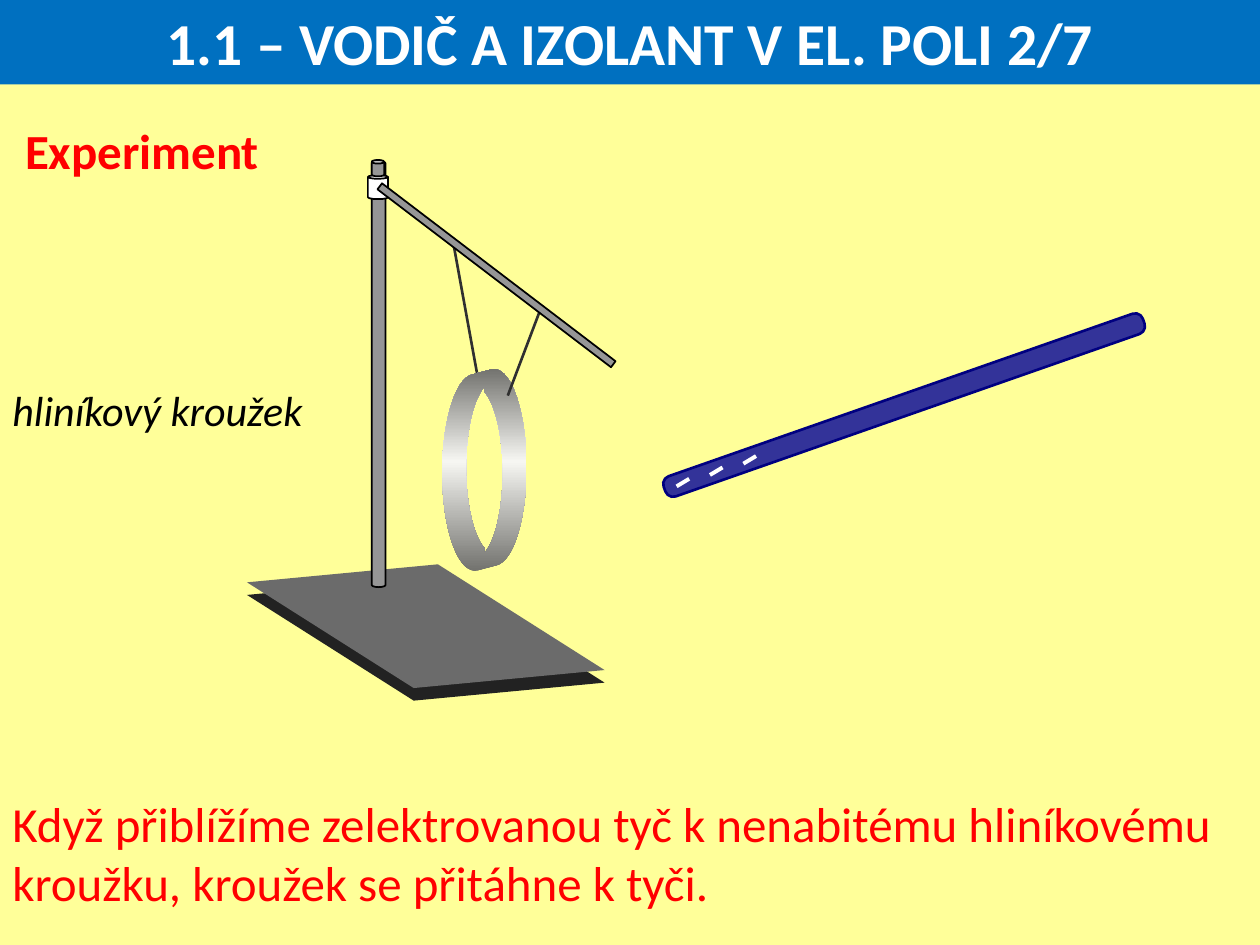
from copy import deepcopy
from math import cos, pi, sin, tan

from lxml.etree import SubElement
from pptx import Presentation
from pptx.dml.color import RGBColor
from pptx.enum.shapes import MSO_CONNECTOR, MSO_SHAPE
from pptx.enum.text import MSO_ANCHOR, PP_ALIGN
from pptx.oxml.ns import qn
from pptx.util import Inches, Pt

FONT = "Calibri"
COLORS = {
    "background": "FFFF99", "banner": "0070C0", "white": "FFFFFF", "black": "000000",
    "red": "FF0000", "steel": "969696", "plate": "6B6B6B", "plate_side": "222222",
    "thread": "303030", "rod": "333399", "rod_edge": "000080",
    "ring_dark": "6E6E6A", "ring_light": "F6F6F2",
}


def color(name):
    return RGBColor.from_string(COLORS[name])


def paint(shape, fill, edge=None, width=1):
    shape.shadow.inherit = False
    shape.fill.solid()
    shape.fill.fore_color.rgb = color(fill)
    if edge:
        shape.line.color.rgb = color(edge)
        shape.line.width = Pt(width)
    else:
        shape.line.fill.background()


def add_preset(slide, kind, box, fill, edge, adjustment, rotation=0, width=1):
    shape = slide.shapes.add_shape(kind, *map(Inches, box))
    shape.adjustments[0] = adjustment
    shape.rotation = rotation
    paint(shape, fill, edge, width)
    return shape


def add_line(slide, start, end, stroke, width):
    line = slide.shapes.add_connector(
        MSO_CONNECTOR.STRAIGHT, *map(Inches, (*start, *end)))
    line.line.color.rgb = color(stroke)
    line.line.width = Pt(width)
    SubElement(line._element.spPr, qn("a:effectLst"))


def add_curved_outline(slide, left, top, *contours):
    placed = [[(Inches(left + x), Inches(top + y)) for x, y in contour]
              for contour in contours]
    builder = slide.shapes.build_freeform(*placed[0][0], scale=1.0)
    builder.add_line_segments(placed[0][1:])
    for contour in placed[1:]:
        builder.move_to(*contour[0])
        builder.add_line_segments(contour[1:])
    shape = builder.convert_to_shape()
    segments = list(shape._element.spPr.iter(qn("a:lnTo")))
    for first, second, third in zip(*[iter(segments)] * 3):
        first.tag = qn("a:cubicBezTo")
        for extra in (second, third):
            first.append(extra[0])
            extra.getparent().remove(extra)
    return shape


def half_ring(center, radii, start, end):
    def point(angle, stretch=0):
        return (center[0] + radii[0] * (cos(angle) - stretch * sin(angle)),
                center[1] + radii[1] * (sin(angle) + stretch * cos(angle)))

    middle = (start + end) / 2
    pull = 4 / 3 * tan((middle - start) / 4)
    points = [point(start)]
    for a, b in ((start, middle), (middle, end)):
        points += [point(a, pull), point(b, -pull), point(b)]
    return points


def join(first, second):
    return (first + [first[-1], second[0]] + second
            + [second[-1], first[0], first[0]])


def style(frame, size, ink, bold=False, italic=False):
    for run in frame.paragraphs[0].runs:
        run.font.name = FONT
        run.font.size = Pt(size)
        run.font.bold = bold
        run.font.italic = italic
        run.font.color.rgb = color(ink)


def add_banner(slide, box, text):
    title = slide.shapes.title
    title.left, title.top, title.width, title.height = map(Inches, box)
    title.fill.solid()
    title.fill.fore_color.rgb = color("banner")
    frame = title.text_frame
    frame.text = text
    frame.vertical_anchor = MSO_ANCHOR.MIDDLE
    frame.paragraphs[0].alignment = PP_ALIGN.CENTER
    style(frame, 34, "white", bold=True)


def add_text(slide, box, text, size, ink, bold=False, italic=False, wrap=True):
    frame = slide.shapes.add_textbox(*map(Inches, box)).text_frame
    frame.word_wrap = wrap
    frame.text = text
    style(frame, size, ink, bold, italic)


def add_plate(slide, box):
    left, top, width, height = box
    for drop, fill in ((0.1, "plate_side"), (0, "plate")):
        slab = add_preset(slide, MSO_SHAPE.PARALLELOGRAM,
                          (left, top + drop, width, height), fill, None, 1.29, 354.6)
        slab._element.spPr.xfrm.set("flipH", "1")


def add_ring(slide, box):
    left, top, width, height = box
    shift_x, shift_y = 0.15, 0.04
    radius_x, radius_y = (width - shift_x) / 2, (height - shift_y) / 2
    outer, inner = (radius_x, radius_y), (radius_x - 0.04, radius_y - 0.1)
    front = (radius_x, radius_y + shift_y)
    back = (radius_x + shift_x, radius_y)
    tilt, cut = 0.08, pi / 2 - 0.34
    rim = join(half_ring(front, outer, pi / 2 - tilt, 3 * pi / 2 - tilt),
               half_ring(back, outer, -pi / 2 - tilt, pi / 2 - tilt))
    opening = join(half_ring(front, inner, -cut, cut),
                   half_ring(back, inner, pi - cut, pi + cut))
    ring = add_curved_outline(slide, left, top, rim, opening)
    paint(ring, "ring_dark")
    ring.fill.gradient()
    ring.fill.gradient_angle = 90
    for position, stop in enumerate(ring.fill.gradient_stops):
        stop.color.rgb = color("ring_dark")
        stop.position = position
    last = ring._element.spPr.findall(".//" + qn("a:gs"))[-1]
    last.addprevious(deepcopy(last))
    shine = ring.fill.gradient_stops[1]
    shine.color.rgb = color("ring_light")
    shine.position = 0.54


def add_stand(slide, box):
    left, top, _, _ = box
    add_plate(slide, (left + 0.04, top + 3.22, 2.76, 0.96))
    add_line(slide, (left + 1.84, top + 1.77), (left + 1.64, top + 0.67), "thread", 1.5)
    add_ring(slide, (left + 1.55, top + 1.66, 0.67, 1.6))
    add_line(slide, (left + 2.07, top + 1.87), (left + 2.32, top + 1.21), "thread", 1.5)
    cans = [
        ((0.99, 0.01, 0.11, 3.38), "steel", 0.3, 0),
        ((0.96, 0.12, 0.16, 0.19), "white", 0.18, 0),
        ((0.99, 0, 0.1, 0.13), "steel", 0.29, 0),
        ((1.95, -0.25, 0.06, 2.33), "steel", 0, 127.3),
    ]
    for (x, y, *size), fill, lid, rotation in cans:
        add_preset(slide, MSO_SHAPE.CAN, (left + x, top + y, *size),
                   fill, "black", lid, rotation)


def add_charged_rod(slide, box):
    left, top, _, _ = box
    add_preset(slide, MSO_SHAPE.ROUNDED_RECTANGLE, box, "rod", "rod_edge",
               0.38, 160.7, 1.5)
    for i in range(3):
        x, y = left + 0.21 + 0.265 * i, top + 0.73 - 0.09 * i
        add_line(slide, (x + 0.1, y - 0.06), (x, y), "white", 2.25)


def main():
    deck = Presentation()
    deck.slide_width, deck.slide_height = Inches(10), Inches(7.5)
    slide = deck.slides.add_slide(deck.slide_layouts[5])
    slide.background.fill.solid()
    slide.background.fill.fore_color.rgb = color("background")

    add_text(slide, (0.1, 0.91, 2.08, 0.57), "Experiment", 28, "red",
             bold=True, wrap=False)
    add_text(slide, (0, 6.25, 10, 1.04),
             "Když přiblížíme zelektrovanou tyč k nenabitému hliníkovému "
             "kroužku, kroužek se přitáhne k tyči.", 28, "red")
    add_text(slide, (0, 3, 2.76, 0.51), "hliníkový kroužek", 24, "black", italic=True)
    add_charged_rod(slide, (5.16, 3.13, 4.03, 0.17))
    add_stand(slide, (1.96, 1.27, 2.85, 4.3))
    add_banner(slide, (0, 0, 10, 0.67), "1.1 – VODIČ A IZOLANT V EL. POLI 2/7")
    deck.save("out.pptx")


if __name__ == "__main__":
    main()
